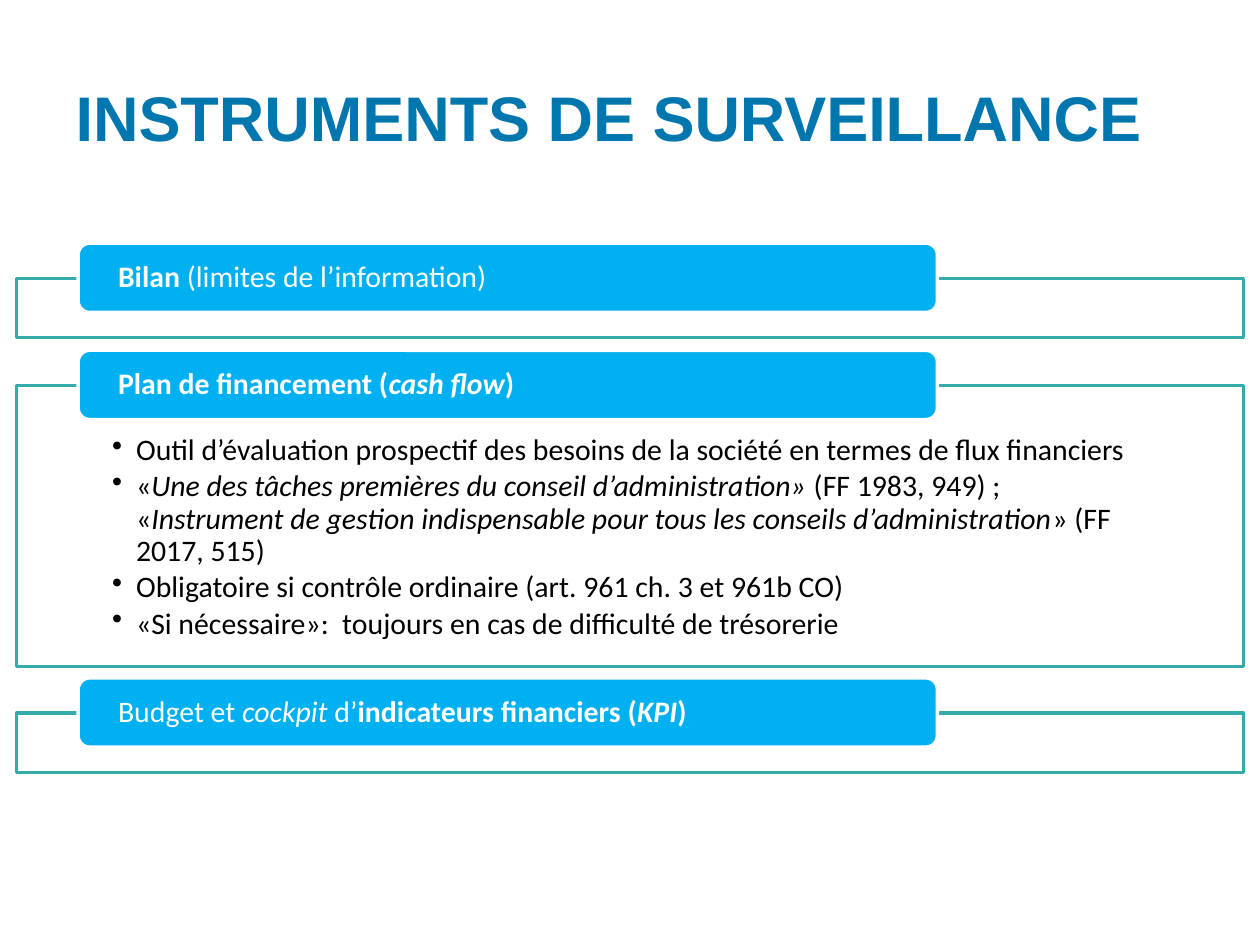
import pptx
import pptx.util
import pptx.dml.color
import pptx.enum.shapes
import pptx.enum.text
import pptx.oxml
import pptx.oxml.ns
from pptx.util import Inches

COLORS = {"title": "0076AF", "label": "00B0F0", "frame": "34AAA9",
          "white": "FFFFFF", "black": "000000"}
RGB = {name: pptx.dml.color.RGBColor.from_string(value) for name, value in COLORS.items()}
SHAPES = pptx.enum.shapes.MSO_SHAPE
ANCHOR = pptx.enum.text.MSO_ANCHOR
LEFT = pptx.enum.text.PP_ALIGN.LEFT

# Each section: frame top, frame height, label spans, bullets; a span is (text, style letters)
SECTIONS = [
    (2.21, 0.47, [("Bilan", "b"), (" (limites de l’information)", "")], []),
    (3.06, 2.23, [("Plan de financement (", "b"), ("cash flow", "bi"), (")", "b")], [
        [("Outil d’évaluation prospectif des besoins de la société en termes de flux financiers", "")],
        [("«", ""), ("Une des tâches premières du conseil d’administration» ", "i"),
         ("(FF 1983, 949) ; «", ""),
         ("Instrument de gestion indispensable pour tous les conseils d’administration", "i"),
         ("» (FF 2017, 515)", "")],
        [("Obligatoire si contrôle ordinaire (art. 961 ch. 3 et 961b CO)", "")],
        [("«Si nécessaire»:  toujours en cas de difficulté de trésorerie", "")],
    ]),
    (5.66, 0.47, [("Budget et ", ""), ("cockpit", "i"), (" d’", ""),
                  ("indicateurs financiers (", "b"), ("KPI", "bi"), (")", "b")], []),
]


def add_box(kind, left, top, width, height, fill, line, margins):
    box = page.shapes.add_shape(kind, Inches(left), Inches(top), Inches(width), Inches(height))
    box.shadow.inherit = False
    box.fill.solid()
    box.fill.fore_color.rgb = RGB[fill]
    box.line.color.rgb = RGB[line]
    box.line.width = pptx.util.Pt(2)
    frame = box.text_frame
    frame.word_wrap = True
    frame.margin_left, frame.margin_top, frame.margin_right, frame.margin_bottom = map(Inches, margins)
    return box


def write_spans(para, spans, color):
    para.alignment = LEFT
    para.line_spacing = 0.9
    para.font.name = "Calibri"
    para.font.size = pptx.util.Pt(17)
    para.font.color.rgb = RGB[color]
    for text, style in spans:
        span = para.add_run()
        span.text = text
        span.font.bold = "b" in style
        span.font.italic = "i" in style


deck = pptx.Presentation()
deck.slide_width, deck.slide_height = Inches(10), Inches(7.5)
page = deck.slides.add_slide(deck.slide_layouts[5])

# Title
title = page.shapes.title
title.left, title.top, title.width, title.height = map(Inches, (0.5, 0.3, 9, 1.25))
title.text_frame.text = "INSTRUMENTS DE SURVEILLANCE"
title.text_frame.vertical_anchor = ANCHOR.MIDDLE
para = title.text_frame.paragraphs[0]
para.alignment = LEFT
para.font.name = "Arial"
para.font.size = pptx.util.Pt(36)
para.font.bold = True
para.font.color.rgb = RGB["title"]

# Framed sections, each with a label over its top edge
for top, height, label_spans, bullets in SECTIONS:
    frame = add_box(SHAPES.RECTANGLE, 0.13, top, 9.74, height, "white", "frame",
                    (0.76, 0.39, 0.76, 0.13))
    frame.text_frame.vertical_anchor = ANCHOR.TOP
    for index, spans in enumerate(bullets):
        para = frame.text_frame.paragraphs[0] if index == 0 else frame.text_frame.add_paragraph()
        properties = para._p.get_or_add_pPr()
        properties.set("marL", str(Inches(0.19)))
        properties.set("indent", str(-Inches(0.19)))
        properties.append(pptx.oxml.parse_xml(
            f'<a:buChar {pptx.oxml.ns.nsdecls("a")} char="•"/>'))
        para.space_after = pptx.util.Pt(2.5)
        write_spans(para, spans, "black")

    label = add_box(SHAPES.ROUNDED_RECTANGLE, 0.62, top - 0.28, 6.82, 0.55, "label", "white",
                    (0.29, 0, 0.29, 0))
    label.text_frame.vertical_anchor = ANCHOR.MIDDLE
    write_spans(label.text_frame.paragraphs[0], label_spans, "white")

deck.save("out.pptx")
